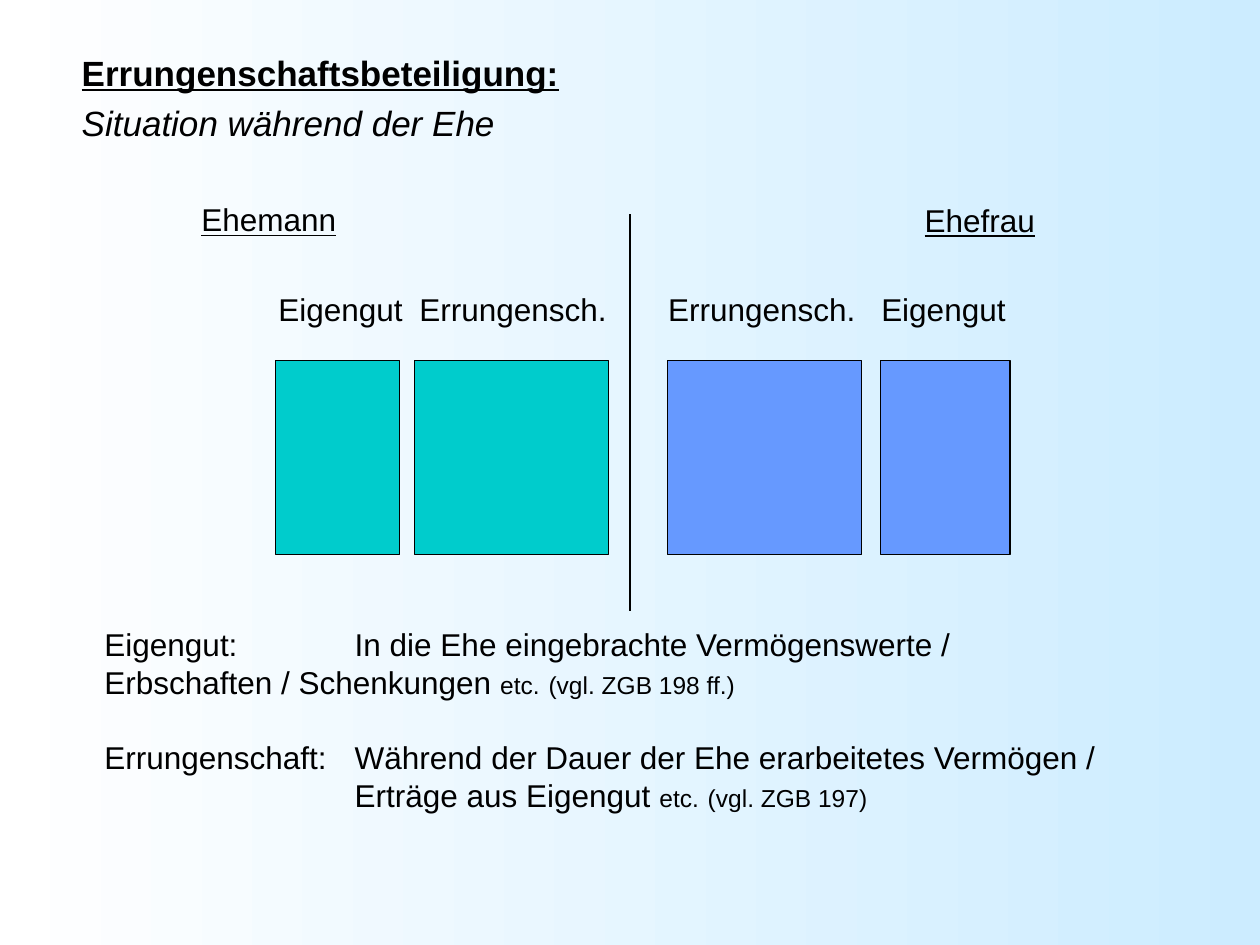
from dataclasses import dataclass
from typing import Any

from lxml.etree import SubElement
from pptx import Presentation
from pptx.dml.color import RGBColor
from pptx.enum.shapes import MSO_CONNECTOR, MSO_SHAPE
from pptx.enum.text import MSO_ANCHOR, MSO_AUTO_SIZE
from pptx.oxml.ns import qn
from pptx.util import Pt

BLACK = RGBColor(0x00, 0x00, 0x00)
WHITE = RGBColor(0xFF, 0xFF, 0xFF)
SKY = RGBColor(0xCC, 0xEC, 0xFF)
TEAL = RGBColor(0x00, 0xCC, 0xCC)
BLUE = RGBColor(0x66, 0x99, 0xFF)

BOX_TOP, BOX_HEIGHT = 205.9, 110.9
LABEL_TOP, LABEL_HEIGHT = 162, 28.8
LINE_WIDTH = 0.75
LEGEND_TAB = 143

BODY = {"size": Pt(18)}
SMALL = {"size": Pt(14)}
SPOUSE = {"size": Pt(18), "underline": True}
HEADING = {"size": Pt(20), "bold": True, "underline": True}
SUBHEADING = {"size": Pt(20), "italic": True}


@dataclass(frozen=True)
class Estate:
    label: str
    label_left: float
    left: float
    width: float
    color: RGBColor


ESTATES = [
    Estate("Eigengut", 152, 157.4, 70.9, TEAL),
    Estate("Errungensch.", 232.6, 236.9, 110.9, TEAL),
    Estate("Errungensch.", 374.7, 381.4, 110.9, BLUE),
    Estate("Eigengut", 496.5, 503.3, 73.9, BLUE),
]


def add_text_box(s, left: float, top: float, width: float, height: float,
                 wrap: bool = True):
    tf = s.shapes.add_textbox(Pt(left), Pt(top), Pt(width), Pt(height)).text_frame
    tf.word_wrap = wrap
    tf.auto_size = MSO_AUTO_SIZE.NONE
    return tf


def add_run(p, text: str, fmt: dict[str, Any]) -> None:
    r = p.add_run()
    r.text = text
    r.font.color.rgb = BLACK
    for name, value in ({"name": "Arial"} | fmt).items():
        setattr(r.font, name, value)


def add_label(s, text: str, left: float, top: float, width: float,
              fmt: dict[str, Any]) -> None:
    tf = add_text_box(s, left, top, width, LABEL_HEIGHT, wrap=False)
    add_run(tf.paragraphs[0], text, fmt)


def add_estate(s, estate: Estate) -> None:
    sp = s.shapes.add_shape(MSO_SHAPE.RECTANGLE, Pt(estate.left), Pt(BOX_TOP),
                            Pt(estate.width), Pt(BOX_HEIGHT))
    sp.shadow.inherit = False
    sp.fill.solid()
    sp.fill.fore_color.rgb = estate.color
    sp.line.color.rgb = BLACK
    sp.line.width = Pt(LINE_WIDTH)
    add_label(s, estate.label, estate.label_left, LABEL_TOP, estate.width + 14, BODY)


def add_divider(s, x: float, top: float, bottom: float) -> None:
    line = s.shapes.add_connector(MSO_CONNECTOR.STRAIGHT,
                                  Pt(x), Pt(top), Pt(x), Pt(bottom))
    line.line.color.rgb = BLACK
    line.line.width = Pt(LINE_WIDTH)
    SubElement(line._element.spPr, qn("a:effectLst"))


def add_definition(p, term: str, first: str, second: str, source: str,
                   hanging: bool) -> None:
    """Write a term, a tab and two lines; hanging aligns both at the tab."""
    pPr = p._p.get_or_add_pPr()
    if hanging:
        pPr.set("marL", str(Pt(LEGEND_TAB)))
        pPr.set("indent", str(-Pt(LEGEND_TAB)))
    tabs = SubElement(pPr, qn("a:tabLst"))
    SubElement(tabs, qn("a:tab"), pos=str(Pt(LEGEND_TAB)), algn="l")
    add_run(p, f"{term}:\t{first}", BODY)
    p.add_line_break()
    add_run(p, f"{second} ", BODY)
    add_run(p, "etc.", SMALL)
    add_run(p, " ", BODY)
    add_run(p, source, SMALL)


def add_title(s) -> None:
    tf = add_text_box(s, 39.6, 28.8, 498.2, 49)
    tf.vertical_anchor = MSO_ANCHOR.MIDDLE
    p = tf.paragraphs[0]
    p.line_spacing = 1.2
    add_run(p, "Errungenschaftsbeteiligung:", HEADING)
    p.add_line_break()
    add_run(p, "Situation während der Ehe", SUBHEADING)


def add_legend(s) -> None:
    tf = add_text_box(s, 52.6, 353.5, 591.8, 115.2)
    add_definition(tf.paragraphs[0], "Eigengut",
                   "In die Ehe eingebrachte Vermögenswerte /",
                   "Erbschaften / Schenkungen", "(vgl. ZGB 198 ff.)", hanging=False)
    p = tf.add_paragraph()
    p.space_before = Pt(21.6)
    add_definition(p, "Errungenschaft",
                   "Während der Dauer der Ehe erarbeitetes Vermögen /",
                   "Erträge aus Eigengut", "(vgl. ZGB 197)", hanging=True)


def set_background(s) -> None:
    fill = s.background.fill
    fill.gradient()
    fill.gradient_angle = 0
    for stop, color, position in zip(fill.gradient_stops, (WHITE, SKY), (0, 1)):
        stop.color.rgb = color
        stop.position = position


def main() -> None:
    prs = Presentation()
    prs.slide_width, prs.slide_height = Pt(720), Pt(540)
    s = prs.slides.add_slide(prs.slide_layouts[6])
    set_background(s)
    add_title(s)
    for estate in ESTATES:
        add_estate(s, estate)
    add_divider(s, 360, 122.4, 349.2)
    add_label(s, "Ehemann", 108, 111, 91.4, SPOUSE)
    add_label(s, "Ehefrau", 521.3, 111.5, 77.8, SPOUSE)
    add_legend(s)
    prs.save("out.pptx")


if __name__ == "__main__":
    main()
